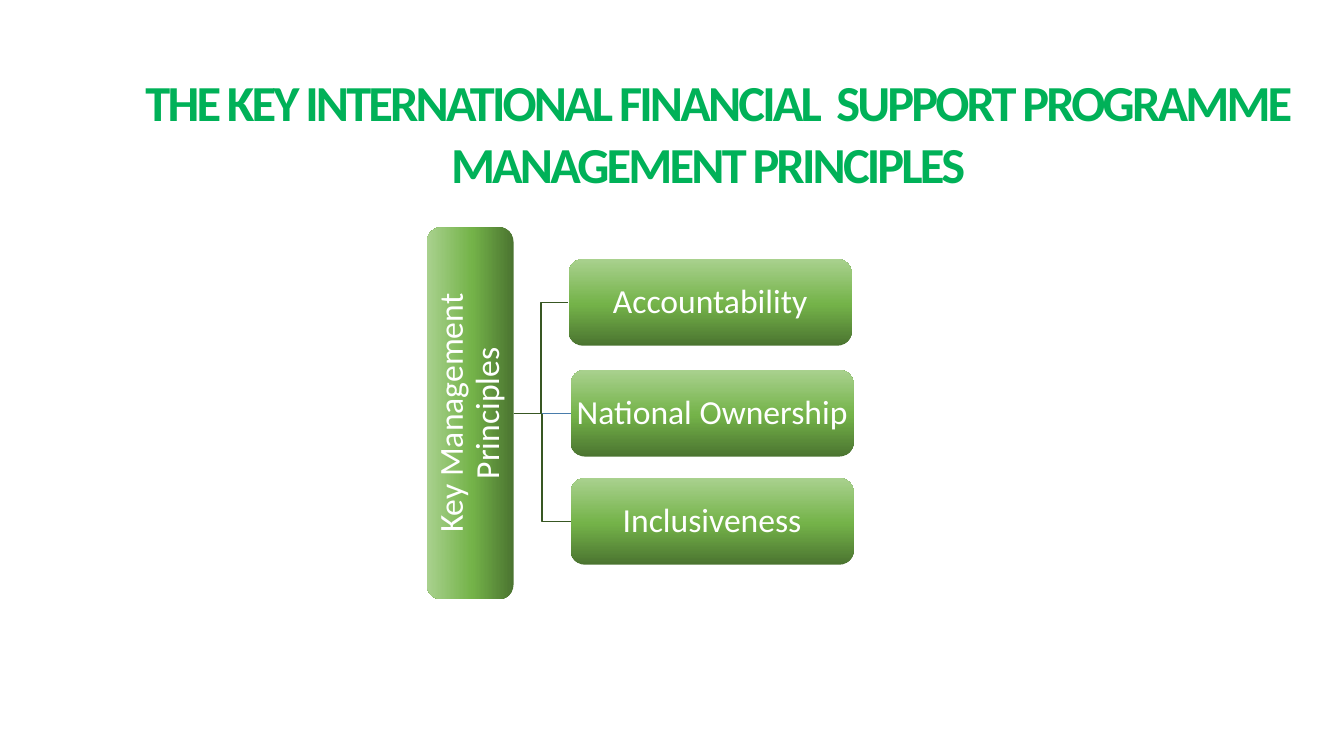
from copy import deepcopy
from dataclasses import dataclass

from pptx import Presentation
from pptx.dml.color import RGBColor as Rgb
from pptx.enum.shapes import MSO_CONNECTOR as Link, MSO_SHAPE as Form
from pptx.enum.text import MSO_ANCHOR as Anchor, PP_ALIGN as Align
from pptx.oxml.ns import qn
from pptx.oxml.xmlchemy import OxmlElement as Node
from pptx.slide import Slide
from pptx.text.text import TextFrame as Frame
from pptx.util import Pt


@dataclass(frozen=True)
class Theme:
    font: str = "Calibri"
    title: str = "00B158"
    label: str = "FFFFFF"
    fade: tuple = ((0, "4B7430"), (0.48, "74B349"), (1, "A9D18E"))
    lead: float = 60
    head: float = 36
    body: float = 24
    track: int = -200


@dataclass(frozen=True)
class Box:
    text: str
    left: float
    top: float
    width: float
    height: float = 61.92
    turn: float = 0

    @property
    def middle(self) -> float:
        return self.top + self.height / 2


@dataclass(frozen=True)
class Branch:
    box: Box
    form: Link
    color: str


THEME = Theme()
ROOT = Box("Key Management Principles", 203.04, 264.24, 265.68, turn=270)
WIDTH = 202.32
BRANCHES = (
    Branch(Box("Inclusiveness", 407.52, 341.5, WIDTH), Link.ELBOW, "385723"),
    Branch(Box("National Ownership", 407.52, 264.24, WIDTH), Link.STRAIGHT, "497CAB"),
    Branch(Box("Accountability", 406.08, 185.04, WIDTH), Link.ELBOW, "385723"),
)


def set_frame(frame: Frame, color: str) -> None:
    frame.word_wrap = True
    frame.vertical_anchor = Anchor.MIDDLE
    para = frame.paragraphs[0]
    para.alignment = Align.CENTER
    para.line_spacing = 0.9
    para.font.name = THEME.font
    para.font.color.rgb = Rgb.from_string(color)


def add_title(slide: Slide) -> None:
    frame = slide.shapes.add_textbox(Pt(66.24), Pt(40.32), Pt(879.12), Pt(92.88)).text_frame
    set_frame(frame, THEME.title)
    para = frame.paragraphs[0]
    para.font.bold = True
    words = "THE KEY INTERNATIONAL FINANCIAL  SUPPORT PROGRAMME MANAGEMENT PRINCIPLES"
    for text, size in ((" ", THEME.lead), (words, THEME.head)):
        run = para.add_run()
        run.text = text
        run.font.size = Pt(size)
        run.font._element.set("spc", str(THEME.track))


def add_box(slide: Slide, box: Box) -> None:
    shape = slide.shapes.add_shape(
        Form.FLOWCHART_ALTERNATE_PROCESS,
        Pt(box.left), Pt(box.top), Pt(box.width), Pt(box.height),
    )
    shape.rotation = box.turn
    shape.shadow.inherit = False
    shape.line.fill.background()
    shape.fill.gradient()
    shape.fill.gradient_angle = 90
    stops = shape._element.spPr.find(qn("a:gradFill")).find(qn("a:gsLst"))
    stops.append(deepcopy(stops[0]))
    for stop, (place, color) in zip(shape.fill.gradient_stops, THEME.fade):
        stop.position = place
        stop.color.rgb = Rgb.from_string(color)
    frame = shape.text_frame
    frame.text = box.text
    frame.margin_left = frame.margin_right = Pt(1.2)
    frame.margin_top = frame.margin_bottom = Pt(1.2)
    set_frame(frame, THEME.label)
    frame.paragraphs[0].font.size = Pt(THEME.body)


def add_link(slide: Slide, branch: Branch) -> None:
    start = ROOT.left + (ROOT.width + ROOT.height) / 2
    line = slide.shapes.add_connector(
        branch.form, Pt(start), Pt(ROOT.middle), Pt(branch.box.left), Pt(branch.box.middle)
    )
    line.line.color.rgb = Rgb.from_string(branch.color)
    line.line.width = Pt(1)
    line._element.spPr.append(Node("a:effectLst"))


def main() -> None:
    deck = Presentation()
    deck.slide_width, deck.slide_height = Pt(960), Pt(540)
    slide = deck.slides.add_slide(deck.slide_layouts[6])
    add_title(slide)
    for branch in BRANCHES:
        add_link(slide, branch)
    add_box(slide, ROOT)
    for branch in reversed(BRANCHES):
        add_box(slide, branch.box)
    deck.save("out.pptx")


if __name__ == "__main__":
    main()
